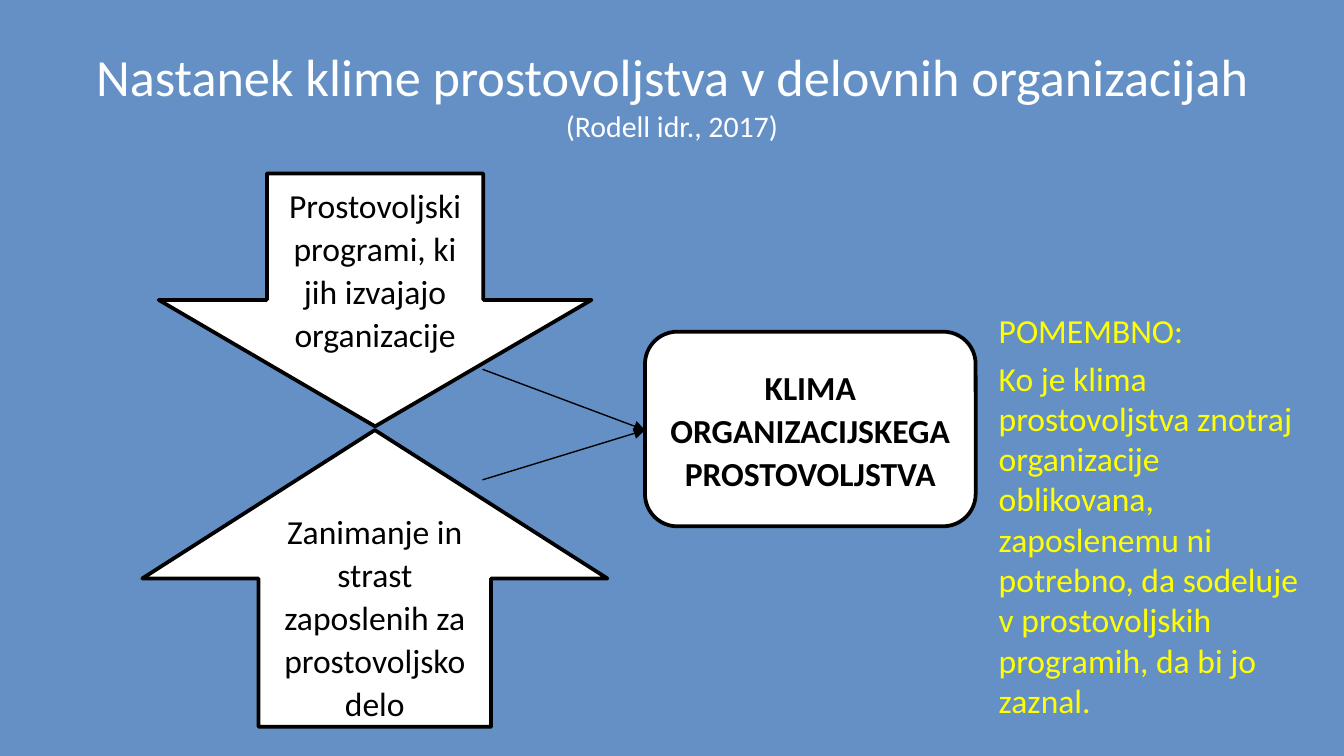
from lxml.etree import SubElement
from pptx import Presentation
from pptx.dml.color import RGBColor
from pptx.enum.shapes import MSO_CONNECTOR, MSO_SHAPE
from pptx.enum.text import MSO_ANCHOR, MSO_AUTO_SIZE, PP_ALIGN
from pptx.oxml.ns import qn
from pptx.util import Cm, Pt

BLUE = RGBColor(0x64, 0x90, 0xC5)
WHITE = RGBColor(0xFF, 0xFF, 0xFF)
BLACK = RGBColor(0x00, 0x00, 0x00)
YELLOW = RGBColor(0xFF, 0xFF, 0x00)


class SlideBuilder:
    font_name = "Calibri"
    text_size = 18
    outline_width = Pt(2)
    arrow_width = Pt(0.75)

    def __init__(self, slide):
        self.slide = slide
        slide.background.fill.solid()
        slide.background.fill.fore_color.rgb = BLUE

    def add_run(self, paragraph, text, color, size=text_size, bold=False):
        run = paragraph.add_run()
        run.text = text
        run.font.name = self.font_name
        run.font.size = Pt(size)
        run.font.bold = bold
        run.font.color.rgb = color

    def place(self, shape, left, top, width, height):
        shape.left, shape.top = Cm(left), Cm(top)
        shape.width, shape.height = Cm(width), Cm(height)
        shape.text_frame.word_wrap = True
        shape.text_frame.auto_size = MSO_AUTO_SIZE.NONE

    def title(self, heading, source, *position):
        title = self.slide.shapes.title
        self.place(title, *position)
        title.text_frame.vertical_anchor = MSO_ANCHOR.MIDDLE
        paragraph = title.text_frame.paragraphs[0]
        paragraph.alignment = PP_ALIGN.CENTER
        self.add_run(paragraph, heading, WHITE, 28)
        self.add_run(paragraph, source, WHITE, 16)

    def body(self, texts, *position):
        body = self.slide.placeholders[1]
        self.place(body, *position)
        frame = body.text_frame
        frame.vertical_anchor = MSO_ANCHOR.TOP
        for index, text in enumerate(texts):
            paragraph = frame.add_paragraph() if index else frame.paragraphs[0]
            paragraph.alignment = PP_ALIGN.LEFT
            paragraph.space_before = Pt(3.6)
            properties = paragraph._p.get_or_add_pPr()
            properties.set("marL", "0")
            properties.set("indent", "0")
            SubElement(properties, qn("a:buNone"))
            self.add_run(paragraph, text, YELLOW)

    def block(self, kind, text, *position, bold=False):
        """Add a white, black-outlined shape with centred text."""
        shape = self.slide.shapes.add_shape(kind, *map(Cm, position))
        self.place(shape, *position)
        shape.shadow.inherit = False
        shape.fill.solid()
        shape.fill.fore_color.rgb = WHITE
        shape.line.color.rgb = BLACK
        shape.line.width = self.outline_width
        frame = shape.text_frame
        frame.vertical_anchor = MSO_ANCHOR.MIDDLE
        frame.margin_left = frame.margin_right = Cm(0.18)
        frame.margin_top = frame.margin_bottom = Cm(0.1)
        paragraph = frame.paragraphs[0]
        paragraph.alignment = PP_ALIGN.CENTER
        paragraph.line_spacing = 1.07
        paragraph.space_after = Pt(6)
        self.add_run(paragraph, text, BLACK, bold=bold)

    def arrow(self, start, end):
        connector = self.slide.shapes.add_connector(
            MSO_CONNECTOR.STRAIGHT, *map(Cm, (*start, *end)))
        connector.line.color.rgb = BLACK
        connector.line.width = self.arrow_width
        SubElement(connector.line._get_or_add_ln(), qn("a:tailEnd"), type="triangle")
        SubElement(connector._element.spPr, qn("a:effectLst"))


def main():
    presentation = Presentation()
    presentation.slide_width, presentation.slide_height = Cm(25.4), Cm(14.29)
    builder = SlideBuilder(presentation.slides.add_slide(presentation.slide_layouts[1]))

    builder.title("Nastanek klime prostovoljstva v delovnih organizacijah ",
                  "(Rodell idr., 2017)", 1.27, 0.58, 22.86, 2.39)
    builder.body(["POMEMBNO:",
                  "Ko je klima prostovoljstva znotraj organizacije oblikovana, "
                  "zaposlenemu ni potrebno, da sodeluje v prostovoljskih "
                  "programih, da bi jo zaznal."], 18.62, 5.74, 6.48, 8)

    builder.block(MSO_SHAPE.DOWN_ARROW,
                  "Prostovoljski programi, ki jih izvajajo organizacije",
                  3, 3.28, 8.18, 4.78)
    builder.block(MSO_SHAPE.UP_ARROW,
                  "Zanimanje in strast zaposlenih za prostovoljsko delo",
                  2.69, 8.13, 8.79, 5.61)
    builder.block(MSO_SHAPE.ROUNDED_RECTANGLE,
                  "KLIMA ORGANIZACIJSKEGA PROSTOVOLJSTVA",
                  12.19, 6.27, 6.25, 3.68, bold=True)

    climate_entry = (12.19, 8.13)
    for start_top in (6.98, 9.07):
        builder.arrow((9.12, start_top), climate_entry)

    presentation.save("out.pptx")


if __name__ == "__main__":
    main()
